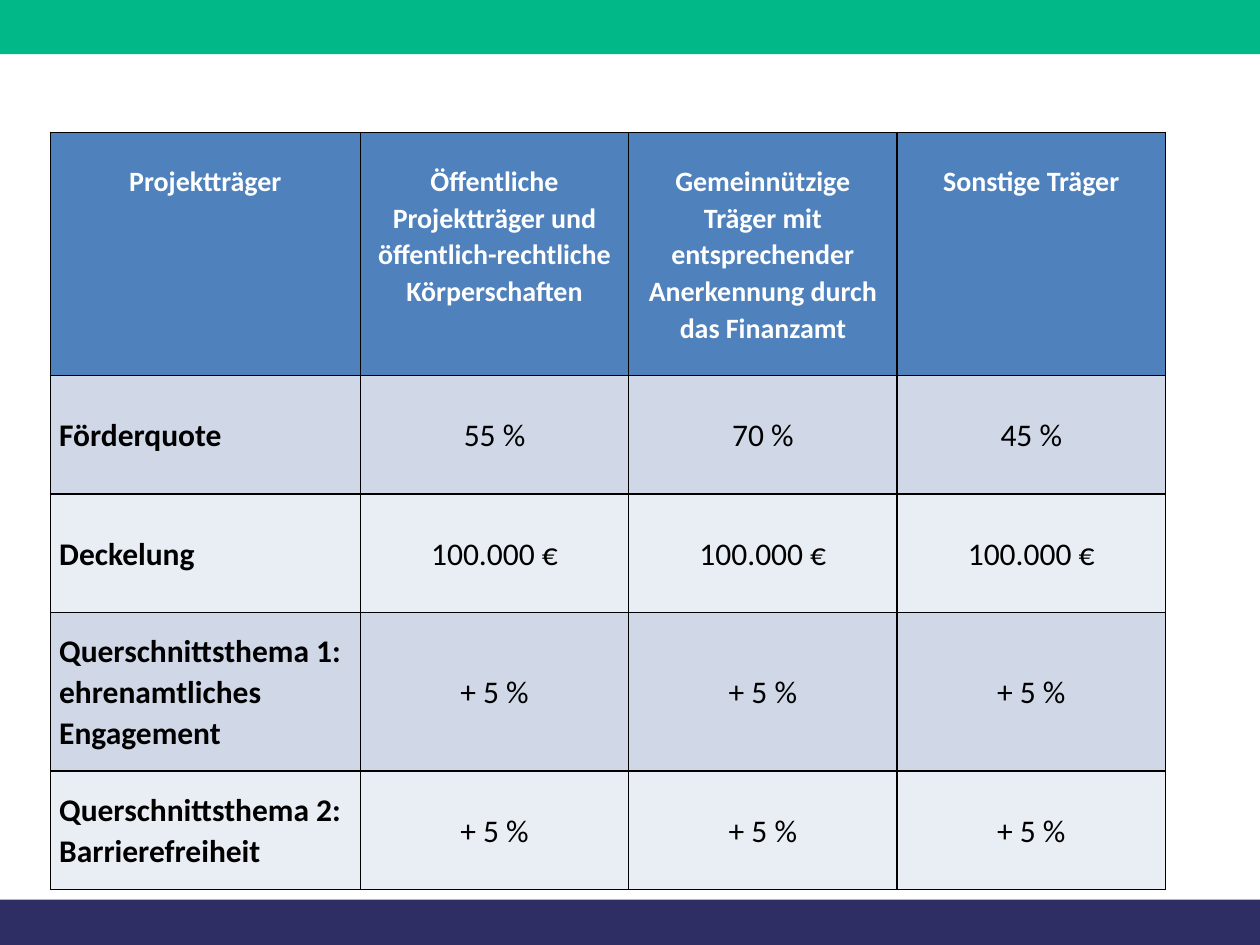
from dataclasses import dataclass

from lxml import etree
from pptx import Presentation
from pptx.dml.color import RGBColor
from pptx.enum.shapes import MSO_SHAPE
from pptx.enum.text import MSO_ANCHOR, PP_ALIGN
from pptx.oxml.ns import qn
from pptx.util import Inches, Pt

RECTANGLE = MSO_SHAPE.RECTANGLE
TOP, MIDDLE = MSO_ANCHOR.TOP, MSO_ANCHOR.MIDDLE
LEFT, CENTER = PP_ALIGN.LEFT, PP_ALIGN.CENTER
BLANK_LAYOUT = 6


@dataclass(frozen=True)
class Theme:
    font: str = "Calibri"
    header_size: int = 16
    body_size: int = 18
    line_spacing: float = 1.07
    border_width: int = 1
    top_bar: str = "00B888"
    bottom_bar: str = "2E2E64"
    header_fill: str = "4F81BD"
    header_text: str = "FFFFFF"
    row_fills: tuple = ("D0D8E8", "E9EDF4")
    body_text: str = "000000"
    border: str = "000000"


THEME = Theme()

COLUMN_WIDTHS = (2.46, 2.13, 2.13, 2.13)
ROW_HEIGHTS = (1.93, 0.94, 0.94, 1.26, 0.94)
HEADERS = (
    "Projektträger",
    "Öffentliche Projektträger und öffentlich-rechtliche Körperschaften",
    "Gemeinnützige Träger mit entsprechender Anerkennung durch das Finanzamt",
    "Sonstige Träger",
)
FUNDING_TERMS = (
    ("Förderquote", "55 %", "70 %", "45 %"),
    ("Deckelung",) + ("100.000 €",) * 3,
    ("Querschnittsthema 1:\nehrenamtliches Engagement",) + ("+ 5 %",) * 3,
    ("Querschnittsthema 2: Barrierefreiheit",) + ("+ 5 %",) * 3,
)


def add_bar(slide, left, top, width, height, color):
    bar = slide.shapes.add_shape(
        RECTANGLE, Inches(left), Inches(top), Inches(width), Inches(height))
    bar.shadow.inherit = False
    bar.fill.solid()
    bar.fill.fore_color.rgb = RGBColor.from_string(color)
    bar.line.fill.background()


def set_borders(cell):
    """Draw all four cell edges; they must precede the fill in the XML."""
    properties = cell._tc.get_or_add_tcPr()
    for position, edge in enumerate(("a:lnL", "a:lnR", "a:lnT", "a:lnB")):
        line = etree.Element(qn(edge), w=str(Pt(THEME.border_width)))
        fill = etree.SubElement(line, qn("a:solidFill"))
        etree.SubElement(fill, qn("a:srgbClr"), val=THEME.border)
        properties.insert(position, line)


def fill_cell(cell, text, fill, color, size, bold, align):
    cell.fill.solid()
    cell.fill.fore_color.rgb = RGBColor.from_string(fill)
    set_borders(cell)
    cell.margin_left = cell.margin_right = Inches(0.07)
    cell.margin_top = cell.margin_bottom = 0
    cell.vertical_anchor = MIDDLE
    frame = cell.text_frame
    for index, content in enumerate(text.split("\n")):
        paragraph = frame.add_paragraph() if index else frame.paragraphs[0]
        paragraph.alignment = align
        paragraph.line_spacing = THEME.line_spacing
        run = paragraph.add_run()
        run.text = content
        run.font.name = THEME.font
        run.font.size = Pt(size)
        run.font.bold = bold
        run.font.color.rgb = RGBColor.from_string(color)


def add_funding_table(slide):
    table = slide.shapes.add_table(
        len(ROW_HEIGHTS), len(COLUMN_WIDTHS), Inches(0.4), Inches(1.05),
        Inches(sum(COLUMN_WIDTHS)), Inches(sum(ROW_HEIGHTS))).table
    for column, width in zip(table.columns, COLUMN_WIDTHS):
        column.width = Inches(width)
    for row, height in zip(table.rows, ROW_HEIGHTS):
        row.height = Inches(height)

    for column, header in enumerate(HEADERS):
        cell = table.cell(0, column)
        fill_cell(cell, header, THEME.header_fill, THEME.header_text,
                  THEME.header_size, True, CENTER)
        cell.vertical_anchor = TOP
        cell.margin_top = Inches(0.24)

    for row, terms in enumerate(FUNDING_TERMS):
        fill = THEME.row_fills[row % 2]
        for column, term in enumerate(terms):
            is_label = column == 0
            fill_cell(table.cell(row + 1, column), term, fill, THEME.body_text,
                      THEME.body_size, is_label, LEFT if is_label else CENTER)


def main():
    presentation = Presentation()
    presentation.slide_width = Inches(10)
    presentation.slide_height = Inches(7.5)
    slide = presentation.slides.add_slide(
        presentation.slide_layouts[BLANK_LAYOUT])
    add_bar(slide, -0.04, 7.14, 10.04, 0.39, THEME.bottom_bar)
    add_bar(slide, 0, 0, 10, 0.43, THEME.top_bar)
    add_funding_table(slide)
    presentation.save("out.pptx")


if __name__ == "__main__":
    main()
